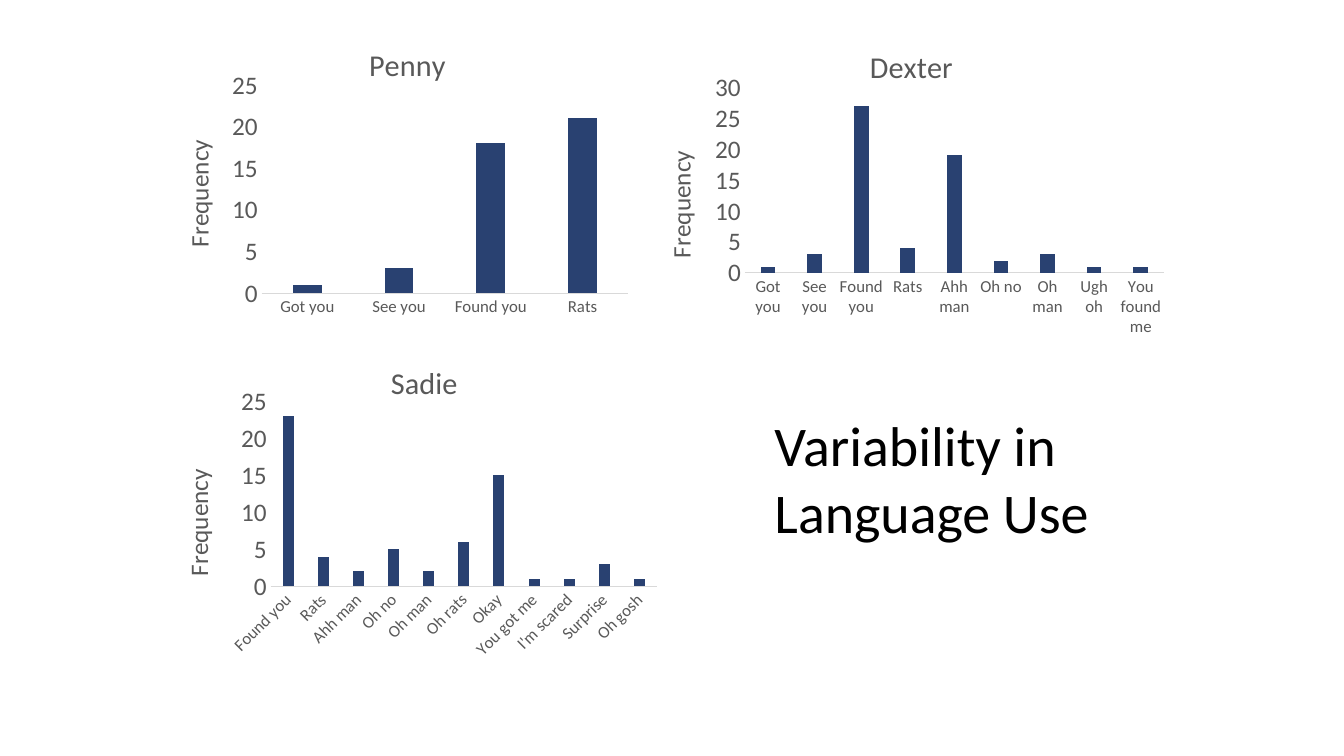
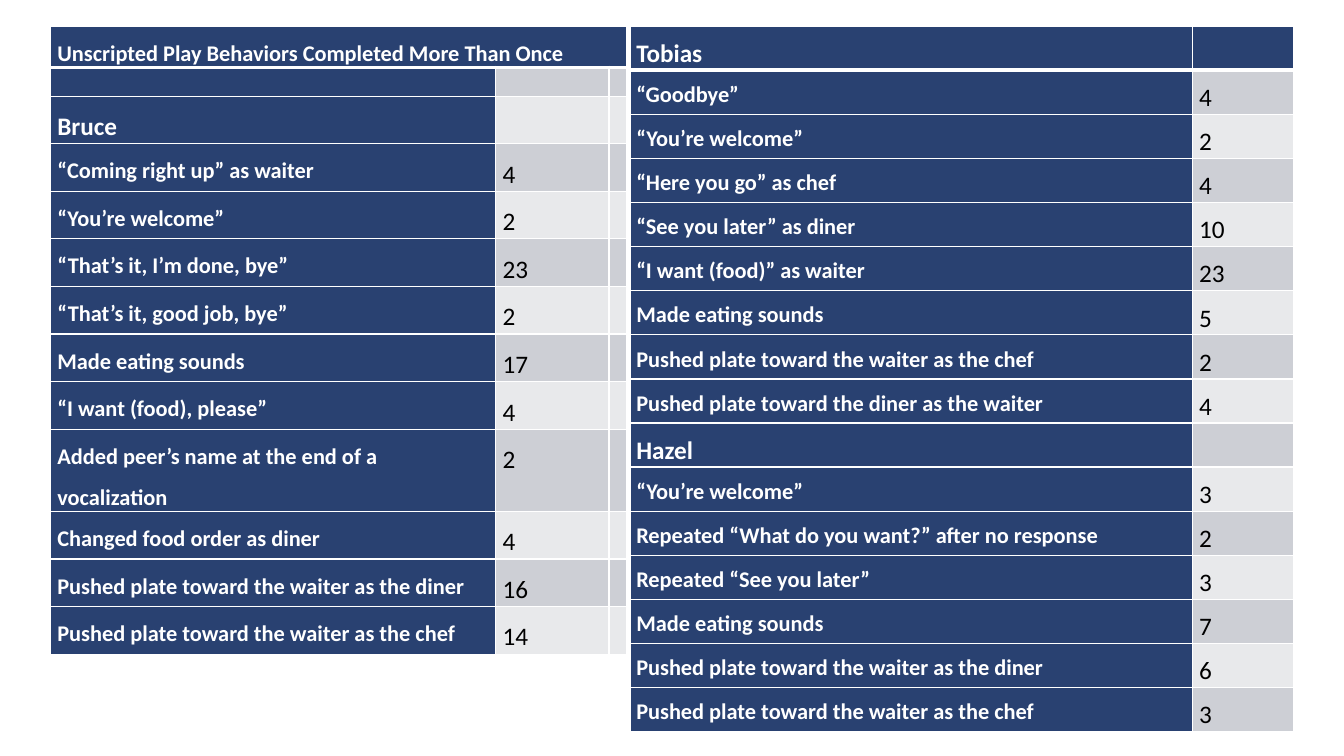
from lxml import etree
from pptx import Presentation
from pptx.chart.data import CategoryChartData
from pptx.dml.color import RGBColor
from pptx.enum.chart import XL_CHART_TYPE, XL_TICK_MARK
from pptx.enum.text import MSO_ANCHOR, MSO_AUTO_SIZE, PP_ALIGN
from pptx.oxml import parse_xml
from pptx.oxml.ns import nsdecls, qn
from pptx.util import Pt

COLUMNS = XL_CHART_TYPE.COLUMN_CLUSTERED
NO_TICK = XL_TICK_MARK.NONE
TOP = MSO_ANCHOR.TOP
LEFT = PP_ALIGN.LEFT
NO_FIT = MSO_AUTO_SIZE.NONE

FONT = "Calibri"
COLORS = {
    "navy": "294171",
    "band_dark": "CDCFD5",
    "band_light": "E8E9EB",
    "white": "FFFFFF",
    "black": "000000",
    "gray": "595959",
    "axis": "D9D9D9",
}
TITLE_ONLY, BLANK = 5, 6


def rgb(name):
    return RGBColor.from_string(COLORS[name])


class Deck:
    def __init__(self):
        self.prs = Presentation()
        self.prs.slide_width, self.prs.slide_height = Pt(960), Pt(540)
        self.s = None

    def slide(self, layout):
        self.s = self.prs.slides.add_slide(self.prs.slide_layouts[layout])

    def style(self, font, size, color, bold=False):
        font.name, font.size, font.bold = FONT, Pt(size), bold
        font.color.rgb = rgb(color)

    def run(self, p, text, size, color, bold=False):
        r = p.add_run()
        r.text = text
        self.style(r.font, size, color, bold)

    def title(self, text, x, y, w, h):
        sp = self.s.shapes.title
        sp.left, sp.top, sp.width, sp.height = Pt(x), Pt(y), Pt(w), Pt(h)
        tf = sp.text_frame
        tf.word_wrap, tf.auto_size, tf.vertical_anchor = True, NO_FIT, TOP
        p = tf.paragraphs[0]
        p.alignment = LEFT
        self.run(p, text, 40, "black")

    def chart(self, name, x, y, w, h, counts, top, plot_height, slanted=False):
        data = CategoryChartData()
        data.categories = list(counts)
        data.add_series("Series 1", list(counts.values()))
        chart = self.s.shapes.add_chart(
            COLUMNS, Pt(x), Pt(y), Pt(w), Pt(h), data).chart
        self.style(chart.font, 18, "black")
        chart.has_legend = False
        chart.has_title = True
        chart.chart_title.include_in_layout = False
        self.run(chart.chart_title.text_frame.paragraphs[0], name, 21.6, "gray")

        plot = chart.plots[0]
        plot.gap_width, plot.overlap, plot.vary_by_categories = 219, -27, False
        fill = plot.series[0].format.fill
        fill.solid()
        fill.fore_color.rgb = rgb("navy")

        cat, val = chart.category_axis, chart.value_axis
        for axis, size in ((cat, 12), (val, 18)):
            axis.major_tick_mark = axis.minor_tick_mark = NO_TICK
            axis.has_major_gridlines = False
            self.style(axis.tick_labels.font, size, "gray")
        cat.format.line.color.rgb = rgb("axis")
        cat.format.line.width = Pt(0.75)
        if slanted:
            cat._element.find(f"{qn('c:txPr')}/{qn('a:bodyPr')}").set("rot", "-2700000")
        val.format.line.fill.background()
        val.minimum_scale, val.maximum_scale, val.major_unit = 0, top, 5
        val.has_title = True
        self.run(val.axis_title.text_frame.paragraphs[0], "Frequency", 18, "gray")
        body = val._element.find(f"{qn('c:title')}//{qn('a:bodyPr')}")
        body.set("rot", "-5400000")
        body.set("vert", "horz")
        self.place_plot(chart, 0.19, 0.17, 0.78, plot_height)

    def place_plot(self, chart, x, y, w, h):
        """Fix the inner plot area, in fractions of the chart."""
        area = chart._chartSpace.find(f".//{qn('c:plotArea')}")
        for old in area.findall(qn("c:layout")):
            area.remove(old)
        layout = parse_xml(f"<c:layout {nsdecls('c')}><c:manualLayout/></c:layout>")
        settings = (("layoutTarget", "inner"), ("xMode", "edge"), ("yMode", "edge"),
                    ("x", x), ("y", y), ("w", w), ("h", h))
        for tag, value in settings:
            etree.SubElement(layout[0], qn(f"c:{tag}")).set("val", str(value))
        area.insert(0, layout)

    def borders(self, cell, top, bottom):
        tcPr = cell._tc.get_or_add_tcPr()
        for side, width in (("L", 1), ("R", 1), ("T", top), ("B", bottom)):
            tcPr.append(parse_xml(
                f'<a:ln{side} {nsdecls("a")} w="{Pt(width)}"><a:solidFill>'
                f'<a:srgbClr val="{COLORS["white"]}"/></a:solidFill></a:ln{side}>'))

    def cell(self, cell, text, size, color, bold, fill, inset, spacing, edges):
        self.borders(cell, *edges)
        cell.fill.solid()
        cell.fill.fore_color.rgb = rgb(fill)
        cell.margin_left = cell.margin_right = Pt(inset)
        cell.margin_top = cell.margin_bottom = 0
        p = cell.text_frame.paragraphs[0]
        if text:
            p.line_spacing = spacing
            self.run(p, text, size, color, bold)
        else:
            etree.SubElement(p._p, qn("a:endParaRPr")).set("sz", "1000")

    def table(self, x, y, widths, heights, rows, names, inset, spacing):
        """Behaviors on navy and banded counts; rows in names get larger text."""
        tbl = self.s.shapes.add_table(
            len(rows), len(widths), Pt(x), Pt(y),
            Pt(sum(widths)), Pt(sum(heights))).table
        tbl.first_row = tbl.horz_banding = False
        for col, w in zip(tbl.columns, widths):
            col.width = Pt(w)
        for row, h in zip(tbl.rows, heights):
            row.height = Pt(h)
        for i, (behavior, count) in enumerate(rows):
            band = "band_dark" if i % 2 else "band_light"
            edges = (3 if i == 1 else 1, 3 if i == 0 else 1)
            for j in range(len(widths)):
                fill = "navy" if i == 0 or j == 0 else band
                if j == 0:
                    look = (behavior, 18 if behavior in names else 16, "white", True)
                else:
                    look = (str(count) if j == 1 else "", 18, "black", False)
                self.cell(tbl.cell(i, j), *look, fill, inset, spacing, edges)
        return tbl


PENNY = {"Got you": 1, "See you": 3, "Found you": 18, "Rats": 21}
DEXTER = {"Got you": 1, "See you": 3, "Found you": 27, "Rats": 4, "Ahh man": 19,
          "Oh no": 2, "Oh man": 3, "Ugh oh": 1, "You found me": 1}
SADIE = {"Found you": 23, "Rats": 4, "Ahh man": 2, "Oh no": 5, "Oh man": 2,
         "Oh rats": 6, "Okay": 15, "You got me": 1, "I'm scared": 1,
         "Surprise": 3, "Oh gosh": 1}

BRUCE = [
    ("Unscripted Play Behaviors Completed More Than Once", ""),
    ("", ""),
    ("Bruce", ""),
    ("“Coming right up” as waiter", 4),
    ("“You’re welcome”", 2),
    ("“That’s it, I’m done, bye”", 23),
    ("“That’s it, good job, bye”", 2),
    ("Made eating sounds", 17),
    ("“I want (food), please”", 4),
    ("Added peer’s name at the end of a vocalization", 2),
    ("Changed food order as diner", 4),
    ("Pushed plate toward the waiter as the diner", 16),
    ("Pushed plate toward the waiter as the chef", 14),
]
TOBIAS_HAZEL = [
    ("Tobias", ""),
    ("“Goodbye”", 4),
    ("“You’re welcome”", 2),
    ("“Here you go” as chef", 4),
    ("“See you later” as diner", 10),
    ("“I want (food)” as waiter", 23),
    ("Made eating sounds", 5),
    ("Pushed plate toward the waiter as the chef", 2),
    ("Pushed plate toward the diner as the waiter", 4),
    ("Hazel", ""),
    ("“You’re welcome”", 3),
    ("Repeated “What do you want?” after no response", 2),
    ("Repeated “See you later”", 3),
    ("Made eating sounds", 7),
    ("Pushed plate toward the waiter as the diner", 6),
    ("Pushed plate toward the waiter as the chef", 3),
]


def main():
    deck = Deck()

    deck.slide(TITLE_ONLY)
    deck.chart("Penny", 123, 18, 336, 252, PENNY, 25, 0.59)
    deck.chart("Dexter", 459, 20, 384, 250, DEXTER, 30, 0.53)
    deck.chart("Sadie", 126, 246, 354, 240, SADIE, 25, 0.55, slanted=True)
    deck.title("Variability in Language Use", 546, 289.5, 252, 152.5)

    deck.slide(BLANK)
    heights = [29.5, 20.5] + [34] * 7 + [58] + [34] * 3
    tbl = deck.table(36, 18.7, (318, 81, 8.6), heights, BRUCE, ("Bruce",), 5, 1.5)
    tbl.cell(0, 0).merge(tbl.cell(0, 2))
    deck.table(450, 18.7, (402, 72), [31.5] * len(TOBIAS_HAZEL), TOBIAS_HAZEL,
               ("Tobias", "Hazel"), 4.5, 1.4)

    deck.prs.save("out.pptx")


if __name__ == "__main__":
    main()
